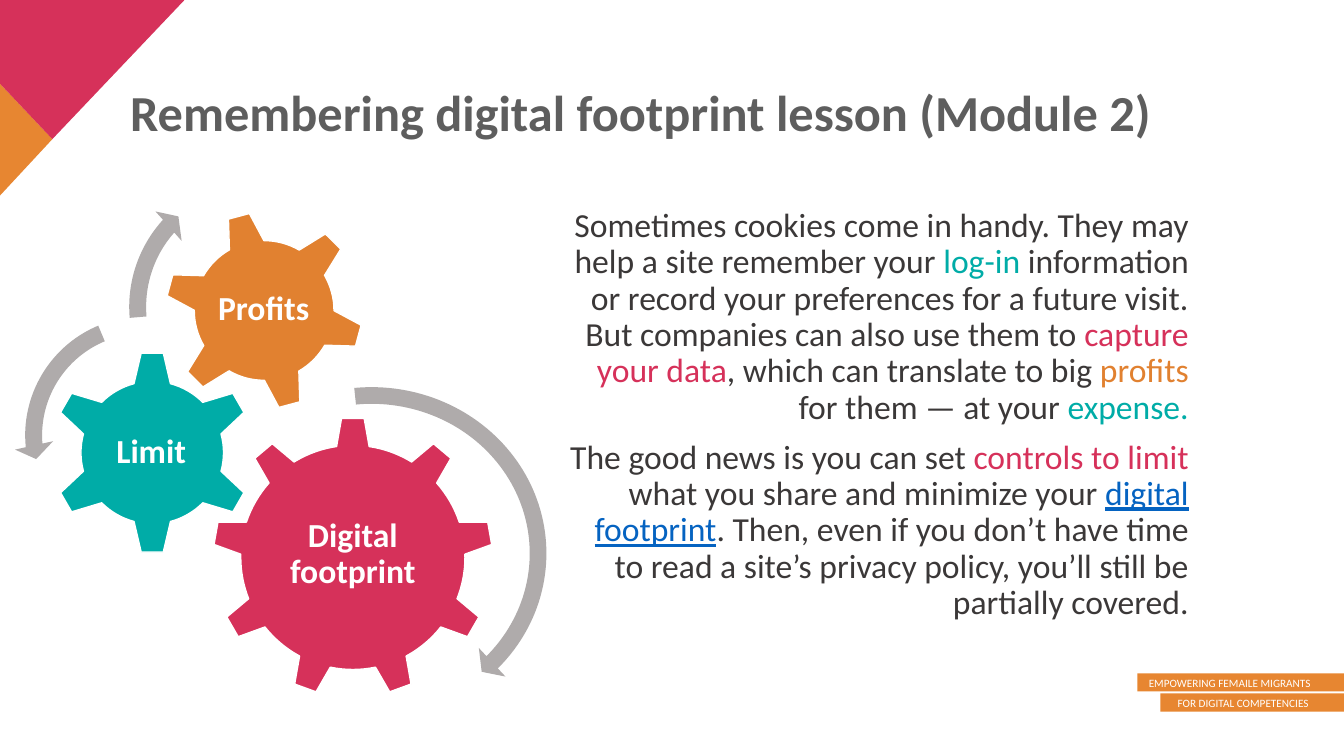
from pptx import Presentation
from pptx import util as u
from pptx.dml.color import RGBColor
from pptx.enum import shapes, text

COLORS = {
    "pink": "D6315A", "orange": "E18130", "teal": "00ACA7", "amber": "E78631",
    "arrow": "AFABAB", "title": "5E5E5E", "dark": "3B3838", "link": "0563C1",
    "white": "FFFFFF",
}
GEO = shapes.MSO_SHAPE
ALIGN = text.PP_ALIGN


def rgb(name):
    """Return the palette colour called name."""
    return RGBColor.from_string(COLORS[name])


def add_run(p, content, size=24, color="dark", bold=False, underline=False, font="Calibri"):
    """Append a formatted run to paragraph p."""
    r = p.add_run()
    r.text = content
    r.font.name, r.font.size = font, u.Pt(size)
    r.font.bold, r.font.underline = bold, underline
    r.font.color.rgb = rgb(color)


class Deck:
    """Hold the presentation, its style and the current slide."""

    def __init__(self):
        """Start a wide deck with one title and content slide."""
        self.prs = Presentation()
        self.prs.slide_width, self.prs.slide_height = u.Inches(13.33), u.Inches(7.5)
        self.s = self.prs.slides.add_slide(self.prs.slide_layouts[1])

    def paint(self, sp, fill, line=None):
        """Give a shape a flat fill and an optional outline."""
        sp.shadow.inherit = False
        sp.fill.solid()
        sp.fill.fore_color.rgb = rgb(fill)
        if line:
            sp.line.color.rgb = rgb(line)
            sp.line.width = u.Pt(1)
        else:
            sp.line.fill.background()

    def polygon(self, points, fill):
        """Draw a closed outline through points given in inches."""
        pts = [(u.Inches(x), u.Inches(y)) for x, y in points]
        builder = self.s.shapes.build_freeform(*pts[0])
        builder.add_line_segments(pts[1:], close=True)
        self.paint(builder.convert_to_shape(), fill)

    def shape(self, kind, box, fill, line=None, rotation=0, adjust=()):
        """Draw a preset shape."""
        sp = self.s.shapes.add_shape(kind, *map(u.Inches, box))
        self.paint(sp, fill, line)
        sp.rotation = rotation
        for i, value in enumerate(adjust):
            sp.adjustments[i] = value

    def label(self, content, box, align, inset=None, anchor=text.MSO_ANCHOR.TOP,
              spacing=1.0, **fmt):
        """Add a text box with one paragraph."""
        tf = self.s.shapes.add_textbox(*map(u.Inches, box)).text_frame
        tf.word_wrap = True
        tf.vertical_anchor = anchor
        if inset is not None:
            tf.margin_left = tf.margin_right = u.Inches(inset)
            tf.margin_top = tf.margin_bottom = u.Inches(inset)
        p = tf.paragraphs[0]
        p.alignment, p.line_spacing = align, spacing
        add_run(p, content, **fmt)

    def gear(self, content, kind, box, text_box, fill, rotation=0):
        """Draw a gear and its upright caption."""
        self.shape(kind, box, fill, "white", rotation)
        self.label(content, text_box, ALIGN.CENTER, 0.03, text.MSO_ANCHOR.MIDDLE, 0.9,
                   color="white", bold=True)

    def fill_placeholder(self, sp, box, paragraphs, align):
        """Move a placeholder and fill it with paragraphs of (text, format) runs."""
        sp.left, sp.top, sp.width, sp.height = map(u.Inches, box)
        tf = sp.text_frame
        tf.word_wrap = True
        tf.auto_size = text.MSO_AUTO_SIZE.NONE
        tf.vertical_anchor = text.MSO_ANCHOR.TOP
        for i, runs in enumerate(paragraphs):
            p = tf.add_paragraph() if i else tf.paragraphs[0]
            p.alignment, p.line_spacing, p.space_before = align, 0.9, u.Pt(10)
            pPr = p._p.get_or_add_pPr()
            pPr.set("marL", "0")
            pPr.set("indent", "0")
            pPr.append(pPr.makeelement(
                "{http://schemas.openxmlformats.org/drawingml/2006/main}buNone", {}))
            for content, fmt in runs:
                add_run(p, content, **fmt)


def main():
    """Build the slide and save it."""
    deck = Deck()
    deck.polygon([(0, 0.83), (0.52, 1.38), (0, 1.94)], "amber")
    deck.polygon([(0, 0), (1.83, 0), (0.52, 1.38), (0, 0.83)], "pink")

    footer = [
        ("EMPOWERING FEMAILE MIGRANTS", 11.28, 6.68, 11.28, 1.82),
        ("FOR DIGITAL COMPETENCIES", 11.51, 6.88, 11.58, 1.5),
    ]
    for content, left, top, text_left, text_width in footer:
        deck.shape(GEO.RECTANGLE, (left, top, 13.33 - left, 0.18), "amber")
        deck.label(content, (text_left, top - 0.02, text_width, 0.24), ALIGN.RIGHT,
                   size=8, color="white")

    title, body = deck.s.placeholders
    heading = ("Remembering digital footprint lesson (Module 2)",
               dict(size=36, color="title", bold=True))
    deck.fill_placeholder(title, (1.19, 0.82, 11.59, 1.04), [[heading]], ALIGN.LEFT)

    pink, orange, teal = (dict(color=c) for c in ("pink", "orange", "teal"))
    cookies = [
        ("Sometimes cookies come in handy. They may help a site remember your ", {}),
        ("log-in", teal),
        (" information or record your preferences for a future visit. "
         "But companies can also use them to ", {}),
        ("capture your data", pink),
        (", which can translate to big ", {}),
        ("profits", orange),
        (" for them — at your ", {}),
        ("expense.", teal),
    ]
    controls = [
        ("The good news is you can set ", {}),
        ("controls to limit", pink),
        (" what you share and minimize your ", {}),
        ("digital footprint", dict(color="link", underline=True)),
        (". Then, even if you don’t have time to read a site’s privacy policy, "
         "you’ll still be partially covered.", {}),
    ]
    deck.fill_placeholder(body, (5.51, 2.02, 6.38, 4.37), [cookies, controls], ALIGN.RIGHT)

    deck.gear("Digital footprint", GEO.GEAR_9, (2.11, 4.14, 2.78, 2.78),
              (2.67, 4.79, 1.66, 1.43), "pink")
    deck.gear("Limit", GEO.GEAR_6, (0.5, 3.48, 2.02, 2.02), (1, 3.99, 1, 1), "teal")
    deck.gear("Profits", GEO.GEAR_6, (1.63, 2.09, 1.98, 1.98),
              (2.06, 2.52, 1.11, 1.11), "orange", 345)

    arrows = [
        (GEO.CIRCULAR_ARROW, (1.84, 3.73, 3.69, 3.52), (0.047, 2.99, 25.254, 158.414, 0.055)),
        (GEO.LEFT_CIRCULAR_ARROW, (0.14, 3.03, 2.58, 2.58),
         (0.065, 4.3, 104.891, 148.378, 0.075)),
        (GEO.CIRCULAR_ARROW, (1.17, 1.65, 2.79, 2.79), (0.06, 3.941, 133.138, 105.082, 0.07)),
    ]
    for kind, box, adjust in arrows:
        deck.shape(kind, box, "arrow", adjust=adjust)

    deck.prs.save("out.pptx")


if __name__ == "__main__":
    main()
